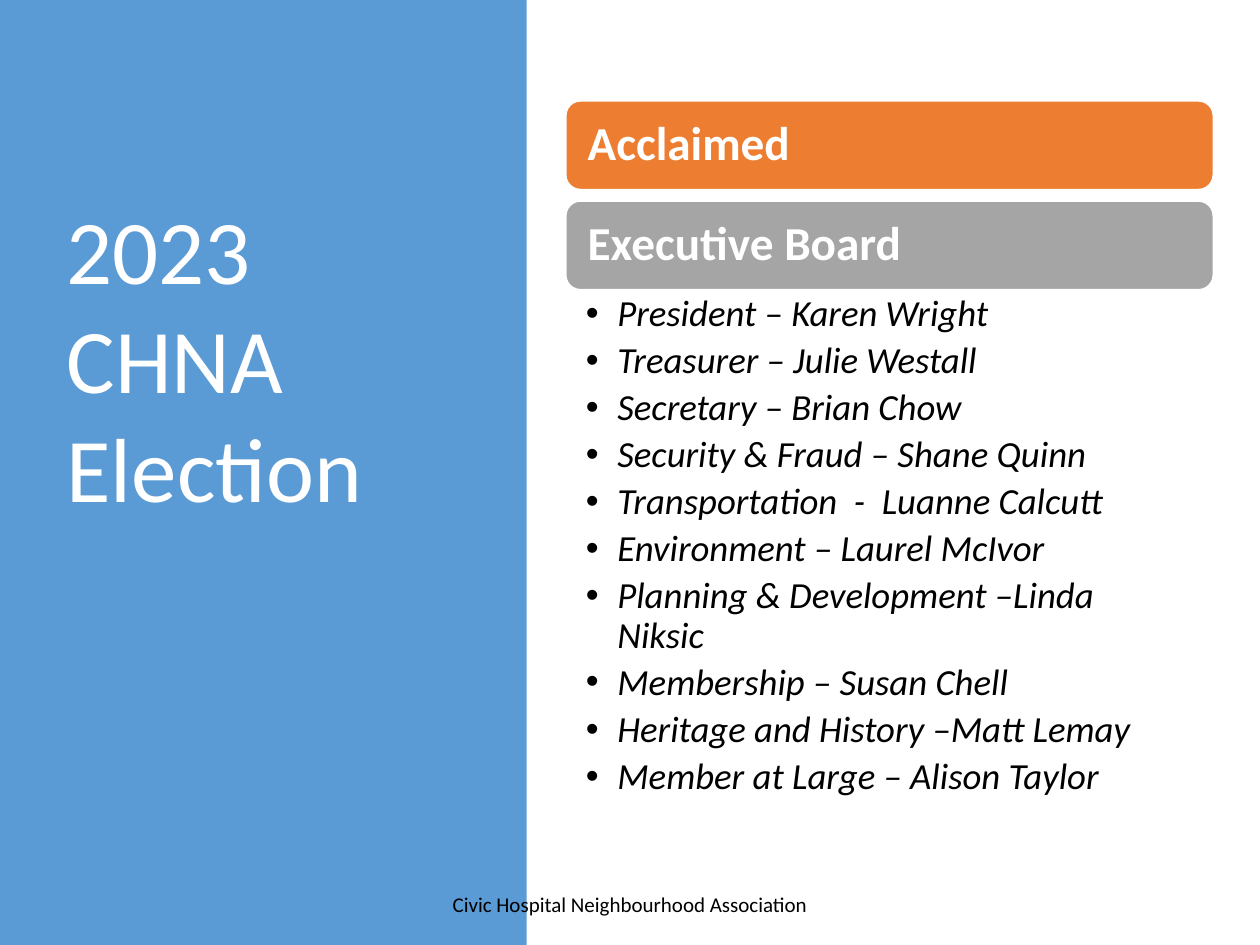
from lxml import etree
from pptx import Presentation, util as u
from pptx.dml.color import RGBColor
from pptx.enum import shapes, text
from pptx.oxml import ns

BLUE = RGBColor(0x5B, 0x9B, 0xD5)
ORANGE = RGBColor(0xED, 0x7D, 0x31)
GREY = RGBColor(0xA5, 0xA5, 0xA5)
WHITE = RGBColor(0xFF, 0xFF, 0xFF)
BLACK = RGBColor(0, 0, 0)

COLUMNS, ROWS = 100, 75
LIST_LEFT, LIST_WIDTH = 44.9, 51.4
HEADING_TOP, HEADING_HEIGHT, HEADING_STEP = 8, 7.05, 7.95

HEADINGS = [("Acclaimed", ORANGE), ("Executive Board", GREY)]
MEMBERS = [
    "President – Karen Wright",
    "Treasurer – Julie Westall",
    "Secretary – Brian Chow",
    "Security & Fraud – Shane Quinn",
    "Transportation  -  Luanne Calcutt",
    "Environment – Laurel McIvor",
    "Planning & Development –Linda Niksic",
    "Membership – Susan Chell",
    "Heritage and History –Matt Lemay",
    "Member at Large – Alison Taylor",
]


class ElectionSlide:
    font = "Calibri"

    def __init__(self, deck):
        self.deck = deck
        self.slide = deck.slides.add_slide(deck.slide_layouts[6])

    def place(self, left, top, width, height):
        column = self.deck.slide_width / COLUMNS
        row = self.deck.slide_height / ROWS
        return [round(n) for n in (left * column, top * row, width * column, height * row)]

    def panel(self, area, fill, preset=shapes.MSO_SHAPE.RECTANGLE, outline=None):
        panel = self.slide.shapes.add_shape(preset, *self.place(*area))
        panel.shadow.inherit = False
        panel.fill.solid()
        panel.fill.fore_color.rgb = fill
        if outline:
            panel.line.color.rgb = outline
            panel.line.width = u.Pt(1)
        else:
            panel.line.fill.background()
        return panel

    def frame(self, holder, insets, anchor=text.MSO_ANCHOR.MIDDLE):
        frame = holder.text_frame
        frame.word_wrap = True
        frame.vertical_anchor = anchor
        (frame.margin_left, frame.margin_top,
         frame.margin_right, frame.margin_bottom) = map(u.Inches, insets)
        return frame

    def add_words(self, paragraph, words, size, color, align=text.PP_ALIGN.LEFT,
                  spacing=1.0, bold=False, italic=False):
        paragraph.alignment = align
        paragraph.line_spacing = spacing
        run = paragraph.add_run()
        run.text = words
        run.font.name = self.font
        run.font.size = u.Pt(size)
        run.font.color.rgb = color
        run.font.bold = bold
        run.font.italic = italic

    def label(self, area, insets, words, size, color, **style):
        box = self.slide.shapes.add_textbox(*self.place(*area))
        frame = self.frame(box, insets)
        self.add_words(frame.paragraphs[0], words, size, color, **style)

    def heading(self, area, words, fill):
        bar = self.panel(area, fill, shapes.MSO_SHAPE.ROUNDED_RECTANGLE, WHITE)
        frame = self.frame(bar, (0.14, 0.14, 0.14, 0.14))
        self.add_words(frame.paragraphs[0], words, 27, WHITE, spacing=0.9, bold=True)

    def bullets(self, area, items, size):
        box = self.slide.shapes.add_textbox(*self.place(*area))
        frame = self.frame(box, (0.16, 0.04, 0.21, 0.04), text.MSO_ANCHOR.TOP)
        for index, item in enumerate(items):
            paragraph = frame.add_paragraph() if index else frame.paragraphs[0]
            properties = paragraph._p.get_or_add_pPr()
            properties.set("marL", str(u.Inches(0.25)))
            properties.set("indent", str(u.Inches(-0.25)))
            etree.SubElement(properties, ns.qn("a:buFont")).set("typeface", "Arial")
            etree.SubElement(properties, ns.qn("a:buChar")).set("char", "•")
            paragraph.space_after = u.Pt(size * 0.2)
            self.add_words(paragraph, item, size, BLACK, spacing=0.9, italic=True)


def main():
    deck = Presentation()
    deck.slide_width, deck.slide_height = u.Inches(10), u.Inches(7.5)
    election = ElectionSlide(deck)

    election.panel((0, 0, 41.8, ROWS), BLUE)
    election.label((4.3, 6.8, 31.2, 60.2), (0.1, 0.1, 0.1, 1.81),
                   "2023 CHNA Election", 52, WHITE)
    election.label((33.1, 69.5, 33.8, 4), (0.1, 0.1, 0.1, 0.05),
                   "Civic Hospital Neighbourhood Association", 12, BLACK,
                   align=text.PP_ALIGN.CENTER)
    for index, (words, fill) in enumerate(HEADINGS):
        top = HEADING_TOP + index * HEADING_STEP
        election.heading((LIST_LEFT, top, LIST_WIDTH, HEADING_HEIGHT), words, fill)
    election.bullets((LIST_LEFT, 23, LIST_WIDTH, 42.8), MEMBERS, 21)

    deck.save("out.pptx")


if __name__ == "__main__":
    main()
